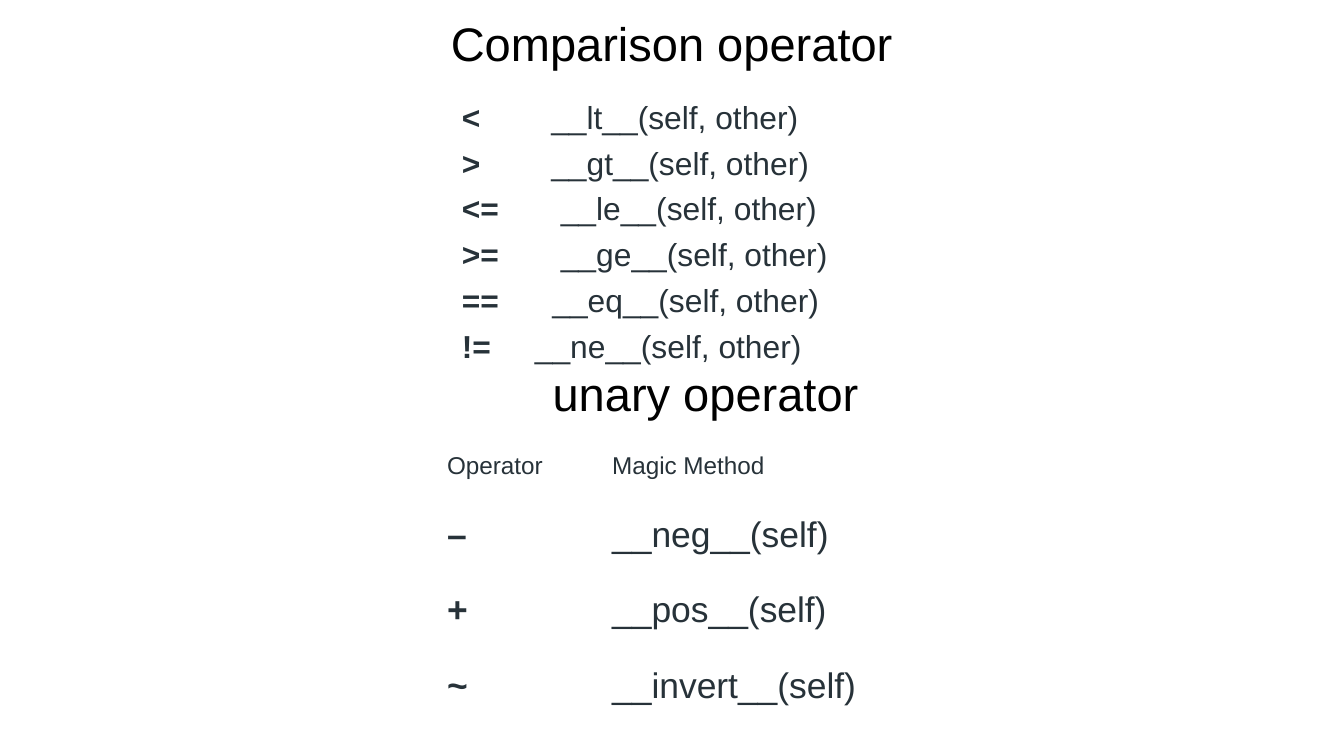
from pptx import Presentation
from pptx import util as u
from pptx.dml import color
from pptx.enum import text

INK = "273239"
COMPARISONS = [
    ("<", "__lt__", 9.31), (">", "__gt__", 9.31), ("<=", "__le__", 9.49),
    (">=", "__ge__", 9.49), ("==", "__eq__", 9.33), ("!=", "__ne__", 9.0),
]
UNARIES = [("Operator", "Magic Method"), ("–", "__neg__(self)"),
           ("+", "__pos__(self)"), ("~", "__invert__(self)")]
INSET = u.Cm(0.25)


def rgb(value):
    """Turn a hex string into a colour."""
    return color.RGBColor.from_string(value)


def style(paragraph, size, ink, bold=None):
    """Set the font of a whole paragraph."""
    font = paragraph.font
    font.name, font.size, font.bold = "Arial", u.Pt(size), bold
    font.color.rgb = rgb(ink)


def set_insets(holder):
    """Give a text frame or table cell equal insets."""
    holder.margin_left = holder.margin_right = INSET
    holder.margin_top = holder.margin_bottom = INSET


def add_frame(slide, left, top, width, height):
    """Add a wrapping text box, placed in centimetres."""
    frame = slide.shapes.add_textbox(
        u.Cm(left), u.Cm(top), u.Cm(width), u.Cm(height)).text_frame
    frame.word_wrap = True
    set_insets(frame)
    return frame


def add_heading(slide, wording, left, top):
    """Add a centred section heading."""
    frame = add_frame(slide, left, top, 23.67, 1.6)
    frame.vertical_anchor = text.MSO_ANCHOR.BOTTOM
    heading = frame.paragraphs[0]
    heading.text = wording
    heading.alignment = text.PP_ALIGN.CENTER
    style(heading, 25.2, "000000")


def add_comparisons(slide):
    """List comparison operators, each method starting at a hanging indent."""
    frame = add_frame(slide, 0.86, 1.45, 23.67, 12.67)
    for index, (operator, method, method_left) in enumerate(COMPARISONS):
        line = frame.add_paragraph() if index else frame.paragraphs[0]
        line.line_spacing = 1.2
        style(line, 17, INK)
        properties = line._p.get_or_add_pPr()
        properties.set("marL", str(u.Cm(method_left)))
        properties.set("indent", str(u.Cm(7.62) - u.Cm(method_left)))
        symbol = line.add_run()
        symbol.text = operator
        symbol.font.bold = True
        line.add_run().text = f"\t{method}(self, other)"


def add_unary_table(slide):
    """Add the table of unary operators and their methods."""
    table = slide.shapes.add_table(
        len(UNARIES), 2, u.Cm(8.2), u.Cm(8.2), u.Cm(8.63), u.Cm(2.12)).table
    for column, width in zip(table.columns, (3.12, 5.51)):
        column.width = u.Cm(width)
    for row, entries in enumerate(UNARIES):
        for column, entry in enumerate(entries):
            cell = table.cell(row, column)
            cell.text = entry
            cell.vertical_anchor = text.MSO_ANCHOR.MIDDLE
            set_insets(cell)
            cell.fill.solid()
            cell.fill.fore_color.rgb = rgb("FFFFFF")
            paragraph = cell.text_frame.paragraphs[0]
            paragraph.line_spacing = 1.15
            style(paragraph, 19 if row else 13, INK, row > 0 and column == 0)


def main():
    """Build the slide of operator methods."""
    deck = Presentation()
    deck.slide_width, deck.slide_height = u.Cm(25.4), u.Cm(14.28)
    slide = deck.slides.add_slide(deck.slide_layouts[6])
    add_heading(slide, "Comparison operator", 0.86, 0)
    add_comparisons(slide)
    add_heading(slide, "unary operator", 1.5, 6.6)
    add_unary_table(slide)
    deck.save("out.pptx")


if __name__ == "__main__":
    main()
